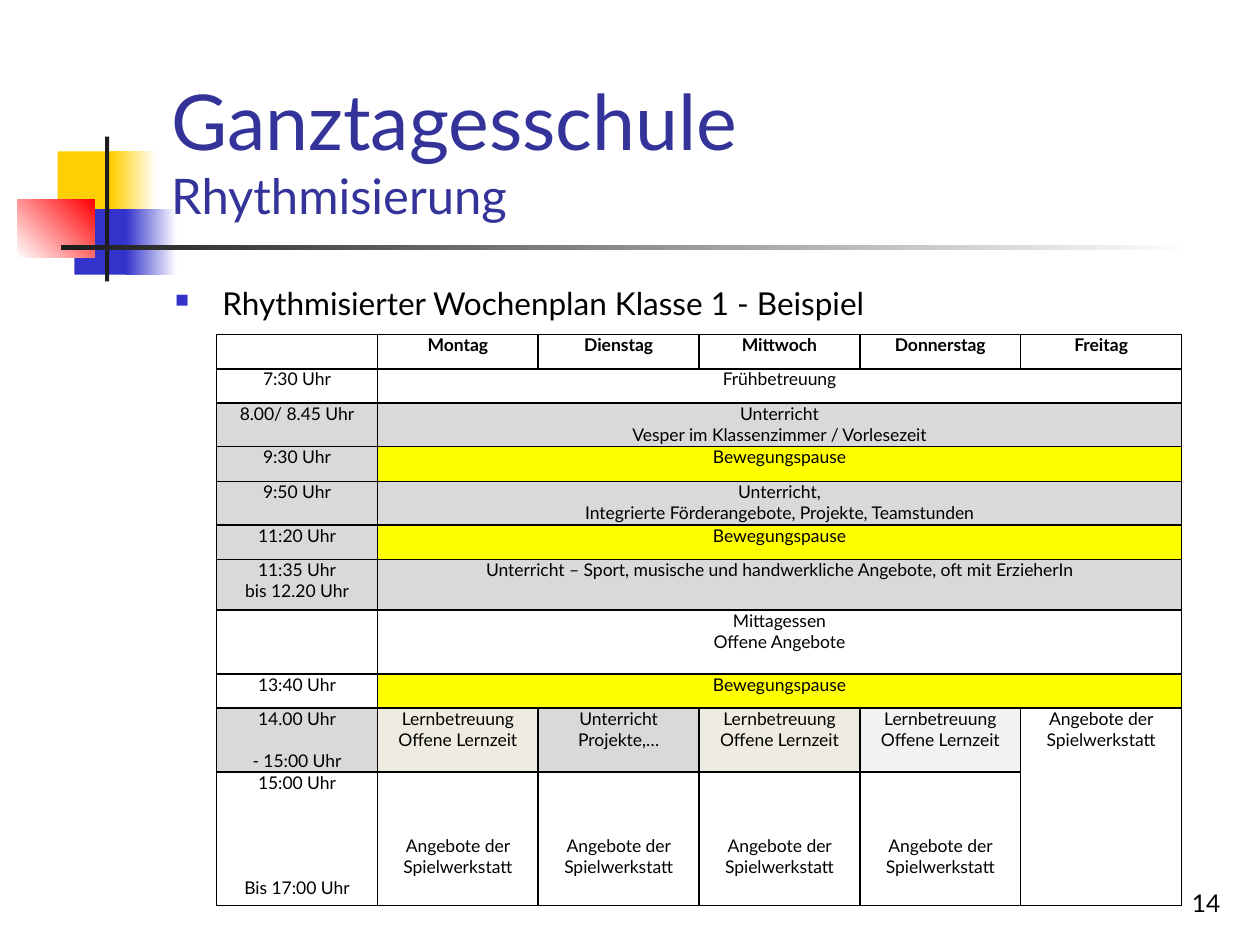
from lxml import etree
from pptx import Presentation
from pptx.dml.color import RGBColor
from pptx.enum.shapes import MSO_SHAPE
from pptx.enum.text import MSO_ANCHOR, PP_ALIGN
from pptx.oxml.ns import qn
from pptx.util import Pt

RECTANGLE = MSO_SHAPE.RECTANGLE
BOTTOM, TOP = MSO_ANCHOR.BOTTOM, MSO_ANCHOR.TOP
LEFT, CENTER, RIGHT = PP_ALIGN.LEFT, PP_ALIGN.CENTER, PP_ALIGN.RIGHT

FONT = "Lato"
COLORS = {
    "black": "000000", "white": "FFFFFF", "title": "333399",
    "gold": "FFCF01", "blue": "3333CC", "red": "FF0000", "ink": "1C1C1C",
    "gray": "D9D9D9", "yellow": "FFFF00", "beige": "EEECE1", "light": "F2F2F2",
}

DECORATIONS = [
    (33, 86.5, 34.5, 37.5, "gold", None, 0),
    (63.5, 86.5, 26, 37.5, "gold", "white", 0),
    (42.5, 119.5, 33, 37.5, "blue", None, 0),
    (72, 119.5, 29, 37.5, "blue", "white", 0),
    (10, 113.75, 44, 33.5, "white", "red", 45),
    (60, 78, 2.4, 82.75, "ink", None, 0),
    (34.75, 140.25, 648, 2.4, "ink", "white", 0),
]

COLUMN_WIDTH = 91.9
COLUMN_COUNT = 6
DAYS = ["Montag", "Dienstag", "Mittwoch", "Donnerstag", "Freitag"]
BREAK = "Bewegungspause"
CLUB = "Angebote der Spielwerkstatt"
STUDY = "Lernbetreuung\nOffene Lernzeit"

SPANNING_ROWS = [
    (19.5, "7:30 Uhr", None, "Frühbetreuung", None),
    (25, "8.00/ 8.45 Uhr", "gray",
     "Unterricht\nVesper im Klassenzimmer / Vorlesezeit", "gray"),
    (20, "9:30 Uhr", "gray", BREAK, "yellow"),
    (25, "9:50 Uhr", "gray",
     "Unterricht,\nIntegrierte Förderangebote, Projekte, Teamstunden", "gray"),
    (19.5, "11:20 Uhr", "gray", BREAK, "yellow"),
    (29, "11:35 Uhr\nbis 12.20 Uhr", "gray",
     "Unterricht – Sport, musische und handwerkliche Angebote, "
     "oft mit ErzieherIn", "gray"),
    (36.5, "", None, "Mittagessen\nOffene Angebote", None),
    (19.5, "13:40 Uhr", None, BREAK, "yellow"),
]
AFTERNOON = [
    (STUDY, "beige"), ("Unterricht\nProjekte,…", "gray"), (STUDY, "beige"),
    (STUDY, "light"), (CLUB, None),
]
HEADER_HEIGHT, AFTERNOON_HEIGHT, EVENING_HEIGHT = 19.5, 36.5, 76.5


def color(name):
    return RGBColor.from_string(COLORS[name])


def format_run(run, size, color_name="black", bold=False):
    run.font.name = FONT
    run.font.size = Pt(size)
    run.font.bold = bold
    run.font.color.rgb = color(color_name)


def add_block(slide, left, top, width, height, start, end, angle):
    shape = slide.shapes.add_shape(
        RECTANGLE, Pt(left), Pt(top), Pt(width), Pt(height))
    shape.shadow.inherit = False
    shape.line.fill.background()
    if end is None:
        shape.fill.solid()
        shape.fill.fore_color.rgb = color(start)
        return
    shape.fill.gradient()
    shape.fill.gradient_angle = angle
    for stop, name in zip(shape.fill.gradient_stops, (start, end)):
        stop.color.rgb = color(name)


def add_text(slide, left, top, width, height, text, sizes,
             color_name="black", anchor=TOP, alignment=LEFT):
    box = slide.shapes.add_textbox(Pt(left), Pt(top), Pt(width), Pt(height))
    frame = box.text_frame
    frame.word_wrap = True
    frame.vertical_anchor = anchor
    paragraph = frame.paragraphs[0]
    paragraph.text = text
    paragraph.alignment = alignment
    for run, size in zip(paragraph.runs, sizes):
        format_run(run, size, color_name)
    return paragraph


def add_bullet(paragraph, indent):
    properties = paragraph._p.get_or_add_pPr()
    properties.set("marL", str(Pt(indent)))
    properties.set("indent", str(-Pt(indent)))
    bullet_color = etree.SubElement(properties, qn("a:buClr"))
    etree.SubElement(bullet_color, qn("a:srgbClr"), val=COLORS["blue"])
    etree.SubElement(properties, qn("a:buSzPct"), val="60000")
    etree.SubElement(properties, qn("a:buChar"), char="■")


def add_borders(cell):
    properties = cell._tc.get_or_add_tcPr()
    for side in ("lnL", "lnR", "lnT", "lnB"):
        line = etree.SubElement(properties, qn(f"a:{side}"), w=str(Pt(1)))
        fill = etree.SubElement(line, qn("a:solidFill"))
        etree.SubElement(fill, qn("a:srgbClr"), val=COLORS["black"])


def prepare_cell(cell):
    cell.margin_left = cell.margin_right = Pt(3)
    cell.margin_top = cell.margin_bottom = 0
    add_borders(cell)
    cell.fill.background()
    etree.SubElement(
        cell.text_frame.paragraphs[0]._p, qn("a:endParaRPr"), sz="1000")


def fill_cell(cell, text, fill=None, bold=False, last_gap=0):
    if fill:
        cell.fill.solid()
        cell.fill.fore_color.rgb = color(fill)
    if not text:
        return
    cell.text_frame.text = text
    for paragraph in cell.text_frame.paragraphs:
        paragraph.alignment = CENTER
        for run in paragraph.runs:
            format_run(run, 10, bold=bold)
    if last_gap:
        cell.text_frame.paragraphs[-1].space_before = Pt(last_gap)


def add_timetable(slide):
    heights = [HEADER_HEIGHT, *(row[0] for row in SPANNING_ROWS),
               AFTERNOON_HEIGHT, EVENING_HEIGHT]
    table = slide.shapes.add_table(
        len(heights), COLUMN_COUNT, Pt(123.75), Pt(191.25),
        Pt(COLUMN_WIDTH * COLUMN_COUNT), Pt(sum(heights))).table
    table.first_row = table.horz_banding = False
    for column in table.columns:
        column.width = Pt(COLUMN_WIDTH)
    for row, height in zip(table.rows, heights):
        row.height = Pt(height)
    for cell in table.iter_cells():
        prepare_cell(cell)

    for index, day in enumerate(DAYS, 1):
        fill_cell(table.cell(0, index), day, bold=True)
    last_column = COLUMN_COUNT - 1
    for index, (_, time, time_fill, text, fill) in enumerate(SPANNING_ROWS, 1):
        fill_cell(table.cell(index, 0), time, time_fill)
        table.cell(index, 1).merge(table.cell(index, last_column))
        fill_cell(table.cell(index, 1), text, fill)

    evening = len(heights) - 1
    afternoon = evening - 1
    fill_cell(table.cell(afternoon, 0), "14.00 Uhr\n- 15:00 Uhr", "gray",
              last_gap=12)
    fill_cell(table.cell(evening, 0), "15:00 Uhr\nBis 17:00 Uhr", last_gap=48)
    table.cell(afternoon, last_column).merge(table.cell(evening, last_column))
    for index, (text, fill) in enumerate(AFTERNOON, 1):
        fill_cell(table.cell(afternoon, index), text, fill)
    for index in range(1, last_column):
        cell = table.cell(evening, index)
        cell.margin_top = Pt(36)
        fill_cell(cell, CLUB)


def main():
    presentation = Presentation()
    presentation.slide_width = Pt(720)
    presentation.slide_height = Pt(540)
    slide = presentation.slides.add_slide(presentation.slide_layouts[6])
    for decoration in DECORATIONS:
        add_block(slide, *decoration)
    add_text(slide, 554.5, 491.75, 150, 36, "14", [14],
             anchor=BOTTOM, alignment=RIGHT)
    add_text(slide, 90.75, 16.5, 613.5, 115.25,
             "Ganztagesschule\vRhythmisierung", [44, 28], "title", BOTTOM)
    heading = add_text(slide, 93, 159, 612, 324,
                       "Rhythmisierter Wochenplan Klasse 1 - Beispiel", [18])
    heading.space_before = Pt(3.6)
    add_bullet(heading, 27)
    add_timetable(slide)
    presentation.save("out.pptx")


if __name__ == "__main__":
    main()
